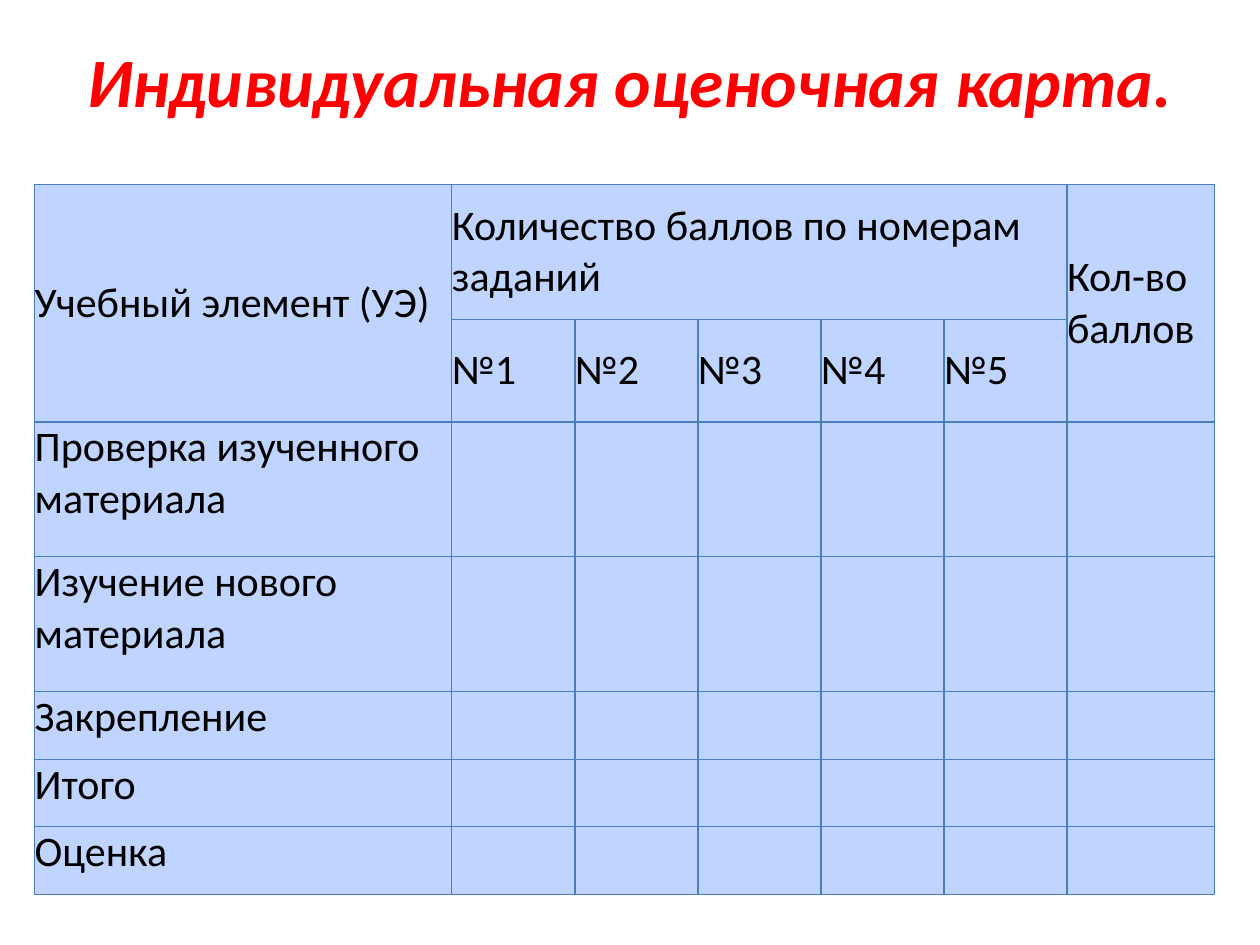
from lxml.etree import SubElement
from pptx import Presentation
from pptx.dml.color import RGBColor
from pptx.enum.text import MSO_ANCHOR as Anchor, MSO_AUTO_SIZE as AutoSize, PP_ALIGN as Align
from pptx.oxml.ns import qn
from pptx.util import Cm, Pt

RED = RGBColor(0xFF, 0x00, 0x00)
BLACK = RGBColor(0x00, 0x00, 0x00)
PALE_BLUE = RGBColor(0xBF, 0xD4, 0xFF)
BORDER_BLUE = RGBColor(0x4B, 0x7E, 0xBC)

TASK_COUNT = 5
COLUMN_WIDTHS = [8.41] + [2.48] * TASK_COUNT + [2.97]
ROW_HEIGHTS = [2.72, 1.36, 2.72, 2.72, 1.36, 1.36, 1.36]
TOTAL_COLUMN = TASK_COUNT + 1
STAGES = ["Проверка изученного материала", "Изучение нового материала",
          "Закрепление", "Итого", "Оценка"]


def write(frame, text, font="Calibri", size=24, color=BLACK, bold=False,
          italic=False, align=Align.LEFT):
    """Put formatted text into the first paragraph of a frame."""
    para = frame.paragraphs[0]
    para.alignment = align
    span = para.add_run()
    span.text = text
    span.font.name = font
    span.font.size = Pt(size)
    span.font.color.rgb = color
    span.font.bold = bold
    span.font.italic = italic


class SlideBuilder:
    """Hold the table style and the current slide."""

    def __init__(self, page, fill=PALE_BLUE, border=BORDER_BLUE, border_width=0.75):
        self.page = page
        self.fill = fill
        self.border = border
        self.border_width = border_width

    def title(self, text, left, top, width, height):
        """Place the heading at the top of the title placeholder."""
        box = self.page.shapes.title
        box.left, box.top, box.width, box.height = map(Cm, (left, top, width, height))
        frame = box.text_frame
        frame.word_wrap = True
        frame.auto_size = AutoSize.NONE
        frame.vertical_anchor = Anchor.TOP
        frame.margin_top = 0
        write(frame, text, size=39.6, color=RED, bold=True, italic=True,
              align=Align.CENTER)

    def table(self, left, top, widths, heights):
        """Add an empty table with filled and bordered cells."""
        shape = self.page.shapes.add_table(
            len(heights), len(widths), Cm(left), Cm(top),
            Cm(sum(widths)), Cm(sum(heights)))
        grid = shape.table
        grid.first_row = grid.horz_banding = False
        for column, width in zip(grid.columns, widths):
            column.width = Cm(width)
        for row, height in zip(grid.rows, heights):
            row.height = Cm(height)
        for cell in grid.iter_cells():
            self.style_cell(cell)
        return grid

    def style_cell(self, cell):
        """Draw the four borders and the fill of a cell."""
        properties = cell._tc.get_or_add_tcPr()
        for side in ("a:lnL", "a:lnR", "a:lnT", "a:lnB"):
            line = SubElement(properties, qn(side), w=str(Pt(self.border_width)))
            solid = SubElement(line, qn("a:solidFill"))
            SubElement(solid, qn("a:srgbClr"), val=str(self.border))
        cell.fill.solid()
        cell.fill.fore_color.rgb = self.fill

    def label(self, cell, text, anchor=Anchor.MIDDLE):
        """Write a cell label without margins."""
        cell.margin_left = cell.margin_right = 0
        cell.margin_top = cell.margin_bottom = 0
        cell.vertical_anchor = anchor
        write(cell.text_frame, text)


def main():
    """Build the score card slide."""
    deck = Presentation()
    deck.slide_width, deck.slide_height = Cm(25.4), Cm(19.05)
    builder = SlideBuilder(deck.slides.add_slide(deck.slide_layouts[5]))
    builder.title("Индивидуальная оценочная карта.", 1.27, 0.76, 22.86, 3.18)

    grid = builder.table(0.7, 3.72, COLUMN_WIDTHS, ROW_HEIGHTS)
    headings = [
        ("Учебный элемент (УЭ)", (0, 0), (1, 0)),
        ("Количество баллов по номерам заданий", (0, 1), (0, TASK_COUNT)),
        ("Кол-во баллов", (0, TOTAL_COLUMN), (1, TOTAL_COLUMN)),
    ]
    for text, first, last in headings:
        grid.cell(*first).merge(grid.cell(*last))
        builder.label(grid.cell(*first), text)
    for number in range(1, TASK_COUNT + 1):
        builder.label(grid.cell(1, number), f"№{number}")
    for row, stage in enumerate(STAGES, start=2):
        builder.label(grid.cell(row, 0), stage, anchor=Anchor.TOP)

    deck.save("out.pptx")


if __name__ == "__main__":
    main()
